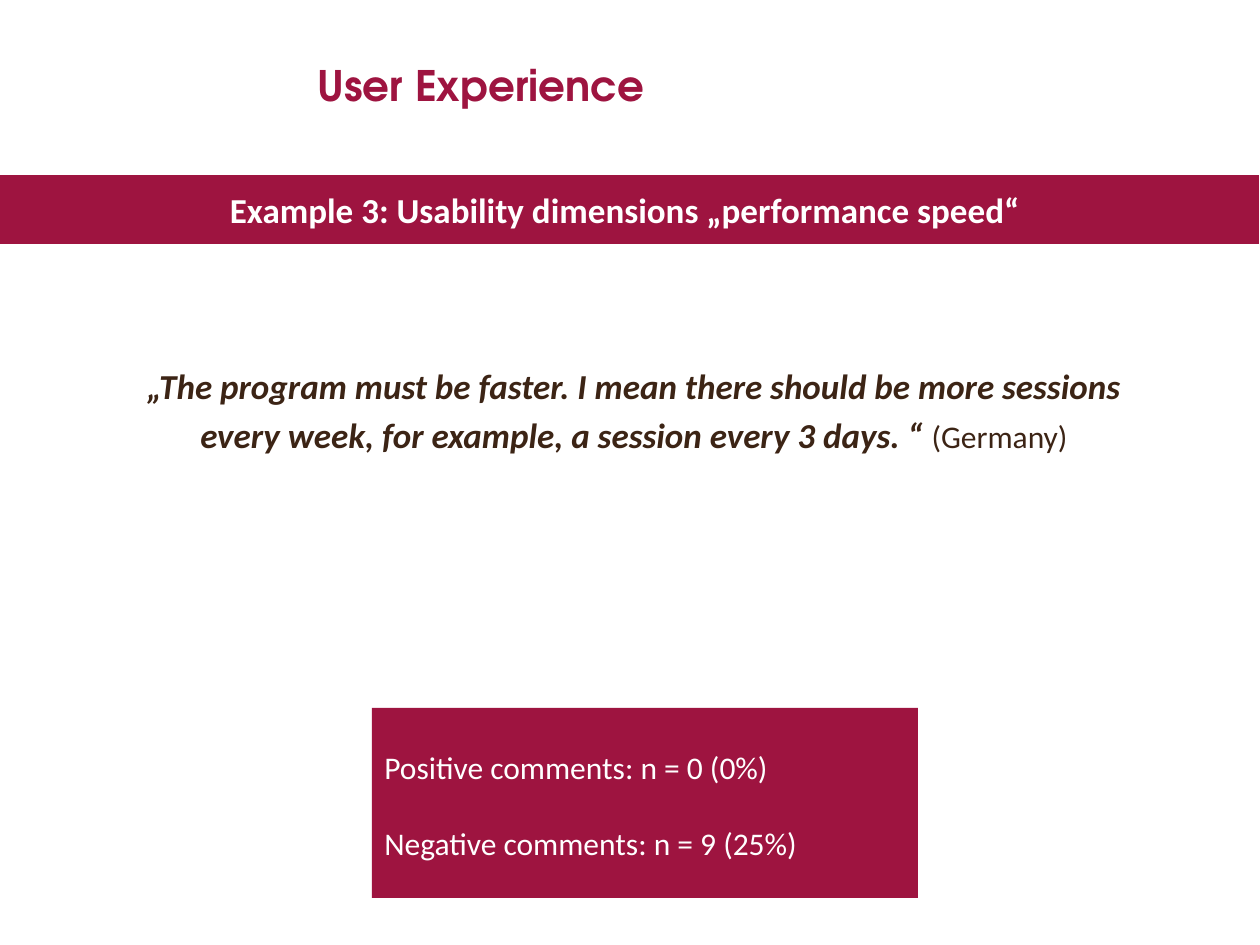
"""Builds the User Experience slide on performance speed comments."""
from pptx import Presentation
from pptx.dml.color import RGBColor
from pptx.enum.shapes import MSO_SHAPE
from pptx.enum.text import MSO_ANCHOR, PP_ALIGN
from pptx.util import Emu, Pt

RECT = MSO_SHAPE.RECTANGLE
TOP, MIDDLE = MSO_ANCHOR.TOP, MSO_ANCHOR.MIDDLE
LEFT, CENTER = PP_ALIGN.LEFT, PP_ALIGN.CENTER
PX = 914400 // 126
COLORS = {"wine": "9E1440", "brown": "3C2415", "white": "FFFFFF"}

TITLE = [[("User Experience", 24, True, False)]]
BANNER = [[("Example 3: Usability dimensions „performance speed“ ", 20, True, False)]]
QUOTE = [
    [("„The program must be faster. I mean there should be more sessions", 20, True, True)],
    [("every week, for example, a session every 3 days. “ ", 20, True, True),
     ("(Germany)", 18, False, False)],
]
COUNTS = [
    [("Positive comments: n = 0 (0%)", 18, False, False)],
    [("Negative comments: n = 9 (25%)", 18, False, False)],
]


def px(*lengths):
    return [Emu(n * PX) for n in lengths]


def write(sp, paragraphs, color, align, anchor=TOP, gap=0, font="Calibri"):
    tf = sp.text_frame
    tf.word_wrap = True
    tf.vertical_anchor = anchor
    for i, runs in enumerate(paragraphs):
        p = tf.add_paragraph() if i else tf.paragraphs[0]
        p.alignment = align
        p.space_before = Pt(gap if i else 0)
        for text, size, bold, italic in runs:
            r = p.add_run()
            r.text = text
            r.font.name = font
            r.font.size = Pt(size)
            r.font.bold = bold
            r.font.italic = italic
            r.font.color.rgb = RGBColor.from_string(COLORS[color])


def add_panel(s, box):
    sp = s.shapes.add_shape(RECT, *px(*box))
    sp.shadow.inherit = False
    sp.fill.solid()
    sp.fill.fore_color.rgb = RGBColor.from_string(COLORS["wine"])
    sp.line.fill.background()
    return sp


def main():
    prs = Presentation()
    prs.slide_width, prs.slide_height = px(1260, 945)
    s = prs.slides.add_slide(prs.slide_layouts[5])

    title = s.shapes.title
    title.left, title.top, title.width, title.height = px(305, 53, 882, 136)
    write(title, TITLE, "wine", LEFT, font="TeX Gyre Adventor")

    quote = s.shapes.add_textbox(*px(79, 358, 1110, 403))
    write(quote, QUOTE, "brown", CENTER, gap=4)

    counts = add_panel(s, (372, 708, 546, 190))
    counts.text_frame.margin_top = Emu(40 * PX)
    write(counts, COUNTS, "white", LEFT, gap=22)

    banner = add_panel(s, (-1, 175, 1260, 69))
    write(banner, BANNER, "white", CENTER, MIDDLE)

    prs.save("out.pptx")


if __name__ == "__main__":
    main()
